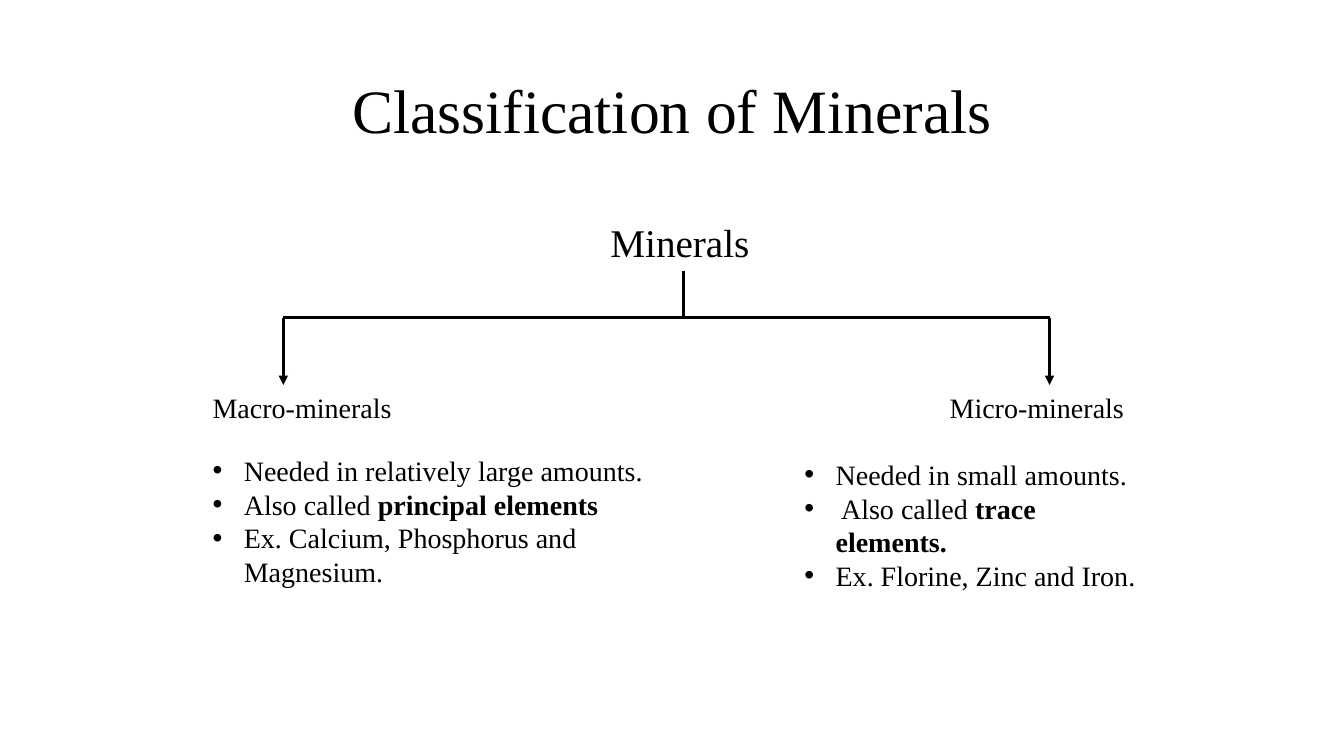
import pptx
import pptx.dml.color
import pptx.enum.shapes
import pptx.enum.text
import pptx.oxml.ns
import pptx.util
from lxml import etree

Inches = pptx.util.Inches
Pt = pptx.util.Pt
ALIGN = pptx.enum.text.PP_ALIGN
ANCHOR = pptx.enum.text.MSO_ANCHOR
AUTO_SIZE = pptx.enum.text.MSO_AUTO_SIZE

COLORS = {"ink": "000000", "background": "FFFFFF"}
FONT = "Times New Roman"
BULLET_INDENT = 0.31

# Each bullet is a plain part and a bold part.
MACRO_BULLETS = [
    ("Needed in relatively large amounts.", ""),
    ("Also called ", "principal elements"),
    ("Ex. Calcium, Phosphorus and Magnesium.", ""),
]
MICRO_BULLETS = [
    ("Needed in small amounts.", ""),
    (" Also called ", "trace elements."),
    ("Ex. Florine, Zinc and Iron.", ""),
]


def color(name):
    return pptx.dml.color.RGBColor.from_string(COLORS[name])


def add_text_box(slide, box, auto_size=AUTO_SIZE.SHAPE_TO_FIT_TEXT):
    shape = slide.shapes.add_textbox(*(Inches(length) for length in box))
    shape.text_frame.word_wrap = True
    shape.text_frame.auto_size = auto_size
    return shape


def style_paragraph(paragraph, size, alignment=ALIGN.LEFT):
    paragraph.alignment = alignment
    paragraph.font.name = FONT
    paragraph.font.size = Pt(size)
    paragraph.font.color.rgb = color("ink")


def add_label(slide, box, text, size, alignment=ALIGN.LEFT):
    shape = add_text_box(slide, box)
    paragraph = shape.text_frame.paragraphs[0]
    paragraph.add_run().text = text
    style_paragraph(paragraph, size, alignment)
    return shape


def add_title(slide, box, text):
    shape = add_text_box(slide, box, AUTO_SIZE.NONE)
    shape.text_frame.vertical_anchor = ANCHOR.MIDDLE
    paragraph = shape.text_frame.paragraphs[0]
    paragraph.add_run().text = text
    paragraph.line_spacing = 0.9
    style_paragraph(paragraph, 44, ALIGN.CENTER)


def add_bullet(paragraph):
    """Give the paragraph a round bullet with a hanging indent."""
    properties = paragraph._p.get_or_add_pPr()
    indent = Inches(BULLET_INDENT)
    properties.set("marL", str(indent))
    properties.set("indent", str(-indent))
    qn = pptx.oxml.ns.qn
    etree.SubElement(properties, qn("a:buFont"), typeface="Arial")
    etree.SubElement(properties, qn("a:buChar"), char="•")


def add_bullet_list(slide, box, bullets):
    text_frame = add_text_box(slide, box).text_frame
    for index, (plain, bold) in enumerate(bullets):
        paragraph = text_frame.add_paragraph() if index else text_frame.paragraphs[0]
        add_bullet(paragraph)
        style_paragraph(paragraph, 20)
        paragraph.add_run().text = plain
        if bold:
            run = paragraph.add_run()
            run.text = bold
            run.font.bold = True


def add_line(slide, start, end, arrow=False):
    connector = slide.shapes.add_connector(
        pptx.enum.shapes.MSO_CONNECTOR.STRAIGHT,
        *(Inches(length) for length in start + end))
    connector.line.color.rgb = color("ink")
    connector.line.width = Pt(2.25)
    qn = pptx.oxml.ns.qn
    if arrow:
        etree.SubElement(connector.line._get_or_add_ln(), qn("a:tailEnd"), type="triangle")
    etree.SubElement(connector._element.spPr, qn("a:effectLst"))
    return connector


def add_tree(slide, box):
    """Draw the root label and its two arrows; the box spans the branches."""
    left, top, width, height = box
    right, bottom = left + width, top + height
    root_width, root_height, stem_height = 3.03, 0.57, 0.46
    root_left = 5.26
    stem_x = root_left + root_width / 2
    stem_top = top + root_height
    branch_y = stem_top + stem_height

    root = add_label(slide, (root_left, top, root_width, root_height),
                     "Minerals", 28, ALIGN.CENTER)
    space = root.text_frame.paragraphs[0].add_run()
    space.text = " "
    space.font.size = Pt(18)

    stem = add_line(slide, (stem_x, stem_top), (stem_x, branch_y))
    stem.begin_connect(root, 2)
    for branch_x in (left, right):
        add_line(slide, (stem_x, branch_y), (branch_x, branch_y))
        add_line(slide, (branch_x, branch_y), (branch_x, bottom), arrow=True)


def main():
    presentation = pptx.Presentation()
    presentation.slide_width = Inches(13.33)
    presentation.slide_height = Inches(7.5)
    slide = presentation.slides.add_slide(presentation.slide_layouts[6])
    slide.background.fill.solid()
    slide.background.fill.fore_color.rgb = color("background")

    add_title(slide, (0.92, 0.4, 11.5, 1.45), "Classification of Minerals")
    add_tree(slide, (2.81, 2.12, 7.6, 1.7))
    add_label(slide, (2.01, 3.82, 2.13, 0.44), "Macro-minerals", 20)
    add_label(slide, (9.32, 3.82, 2, 0.44), "Micro-minerals", 20)
    add_bullet_list(slide, (2.01, 4.45, 4.65, 1.45), MACRO_BULLETS)
    add_bullet_list(slide, (7.88, 4.49, 3.63, 1.45), MICRO_BULLETS)
    presentation.save("out.pptx")


if __name__ == "__main__":
    main()
